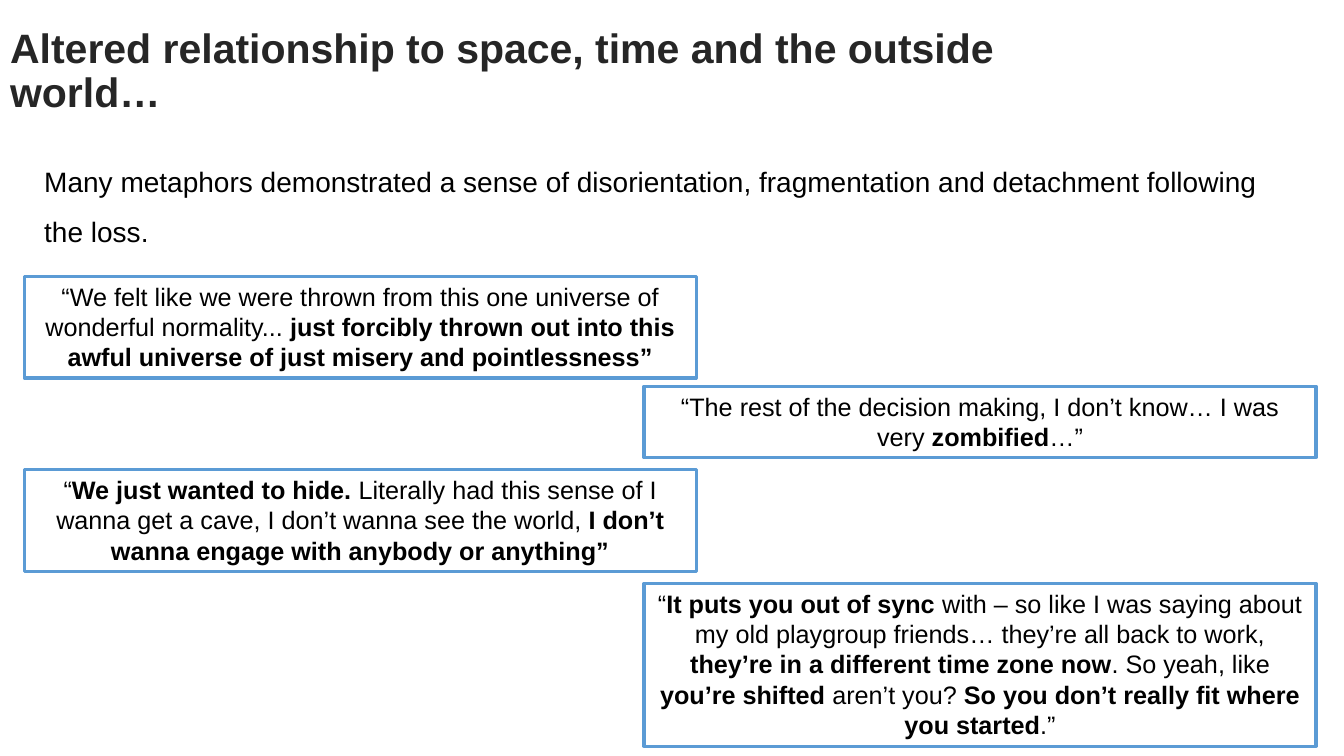
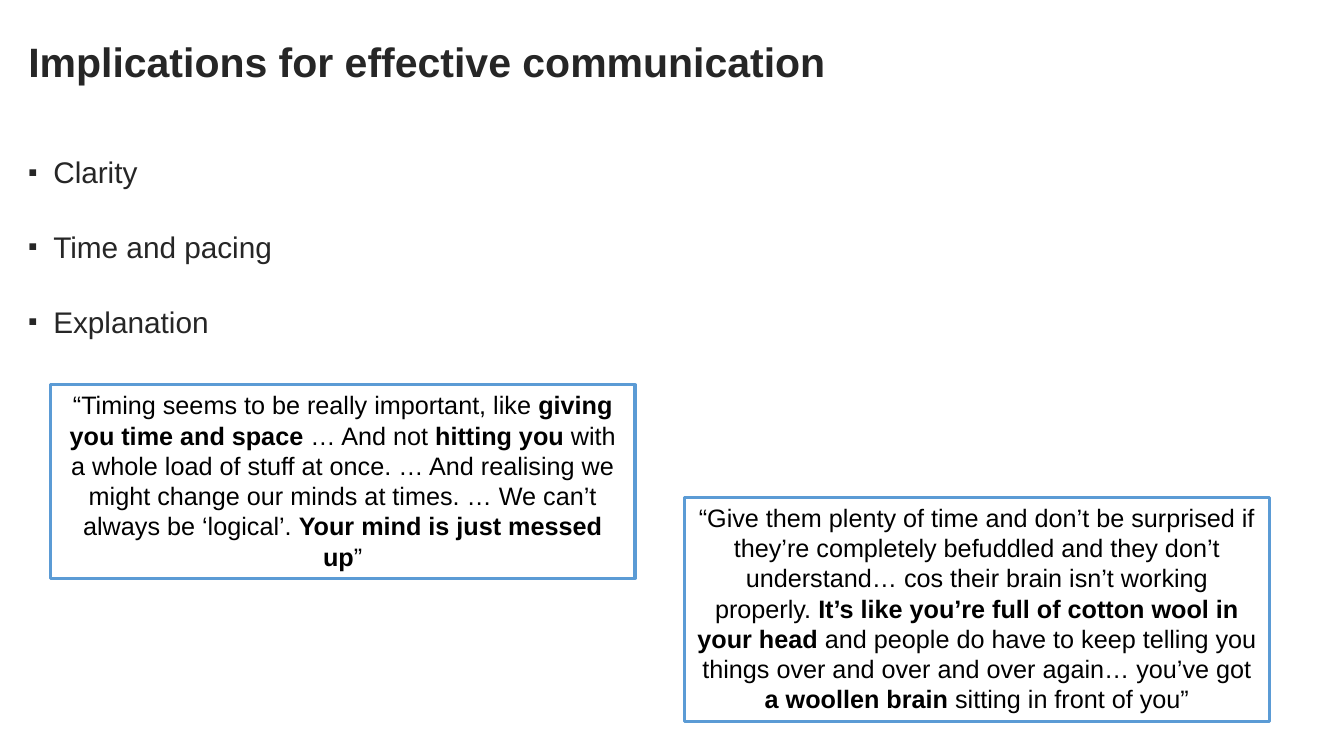
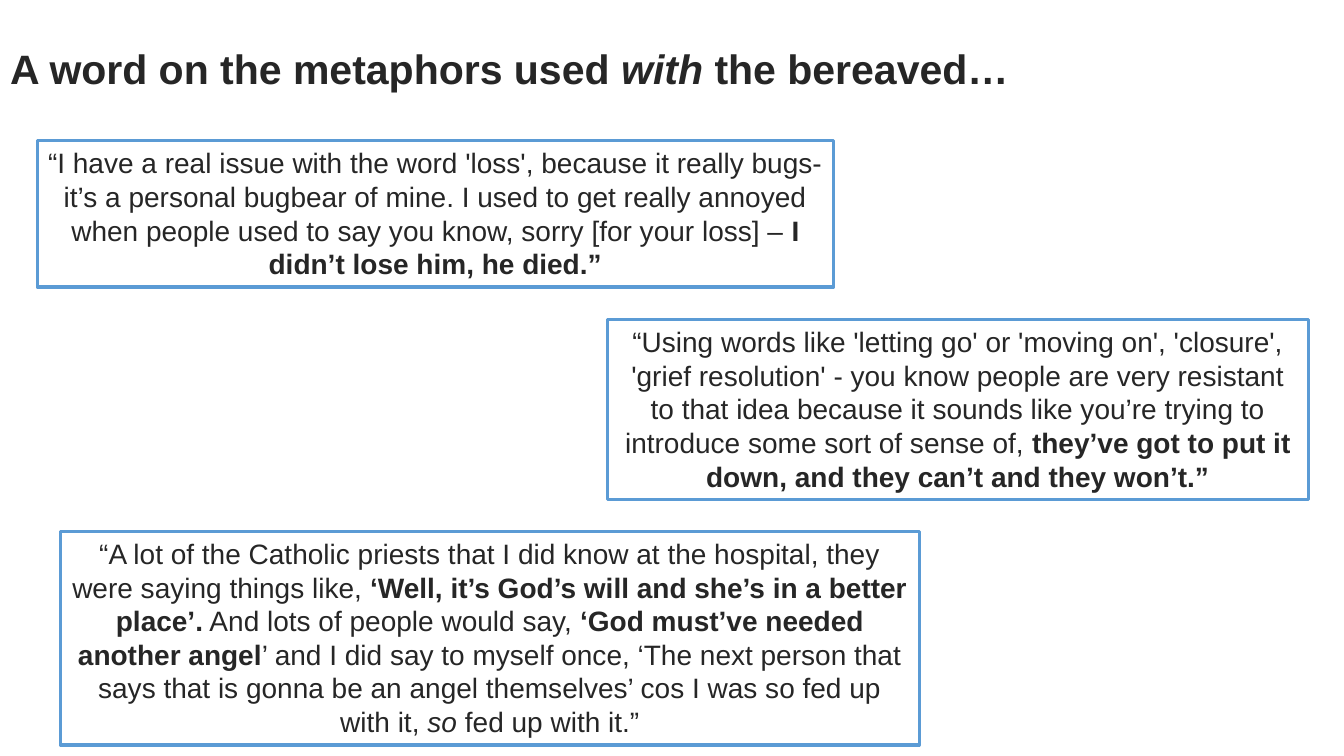
from dataclasses import dataclass

from lxml.etree import SubElement
from pptx import Presentation
from pptx.dml.color import RGBColor as RGB
from pptx.enum.shapes import MSO_SHAPE as SHAPE
from pptx.enum.text import MSO_ANCHOR as ANCHOR
from pptx.enum.text import MSO_AUTO_SIZE as FIT
from pptx.enum.text import PP_ALIGN as ALIGN
from pptx.oxml.ns import qn
from pptx.util import Pt


@dataclass(frozen=True)
class Theme:
    font: str = "Arial"
    heading: RGB = RGB(0x26, 0x26, 0x26)
    black: RGB = RGB(0, 0, 0)
    paper: RGB = RGB(0xFF, 0xFF, 0xFF)
    outline: RGB = RGB(0x5B, 0x9B, 0xD5)
    outline_width: float = 2.25
    title_size: float = 29.3
    bullet_size: float = 21.3
    large_size: float = 20
    quote_size: float = 18


THEME = Theme()


def write_marked(paragraph, text, size, color, bold=False, **layout):
    """Write text in which *stars* mark bold and _underscores_ mark italic."""
    for name, value in layout.items():
        setattr(paragraph, name, value)
    for i, part in enumerate(text.split("*")):
        for j, piece in enumerate(part.split("_")):
            if not piece:
                continue
            run = paragraph.add_run()
            run.text = piece
            style = {"name": THEME.font, "size": Pt(size),
                     "bold": bold or i % 2 == 1, "italic": j % 2 == 1}
            for name, value in style.items():
                setattr(run.font, name, value)
            run.font.color.rgb = color


def prepare_frame(frame, anchor=ANCHOR.TOP, fit=FIT.NONE):
    settings = {"word_wrap": True, "auto_size": fit, "vertical_anchor": anchor}
    for name, value in settings.items():
        setattr(frame, name, value)
    return frame


# Boxes are (left, top, width, height) in points.
SLIDES = [
    {
        "title": "Altered relationship to space, time and the outside world…",
        "title_box": (0, 16.5, 737, 104),
        "intro": "Many metaphors demonstrated a sense of disorientation, "
                 "fragmentation and detachment following the loss.",
        "intro_box": (24.5, 102, 910, 106.5),
        "quote_size": THEME.quote_size,
        "quote_color": THEME.black,
        "quotes": [
            ((17.3, 197.3, 480, 72.7),
             "“We felt like we were thrown from this one universe of wonderful "
             "normality... *just forcibly thrown out into this awful universe "
             "of just misery and pointlessness”*"),
            ((460, 275.8, 480, 51),
             "“The rest of the decision making, I don’t know… I was very "
             "*zombified*…”"),
            ((17.3, 335.3, 480, 72.7),
             "“*We just wanted to hide. *Literally had this sense of I wanna "
             "get a cave, I don’t wanna see the world, *I don’t wanna engage "
             "with anybody or anything”*"),
            ((460, 416.7, 480, 116.4),
             "“*It puts you out of sync *with – so like I was saying about my "
             "old playgroup friends… they’re all back to work, *they’re in a "
             "different time zone now*. So yeah, like *you’re shifted *aren’t "
             "you? *So you don’t really fit where you started*.”"),
        ],
    },
    {
        "title": "Implications for effective communication",
        "title_box": (13, 26.6, 815, 78),
        "bullets": ["Clarity", "Time and pacing", "Explanation"],
        "bullets_box": (13, 88.6, 911.5, 244),
        "quote_size": THEME.quote_size,
        "quote_color": THEME.black,
        "quotes": [
            ((36, 274.8, 417.6, 138.3),
             "“Timing seems to be really important, like *giving you time and "
             "space* … And not *hitting you *with a whole load of stuff at "
             "once. … And realising we might change our minds at times. … We "
             "can’t always be ‘logical’. *Your mind is just messed up*”"),
            ((489, 355.2, 417.6, 160),
             "“Give them plenty of time and don’t be surprised if they’re "
             "completely befuddled and they don’t understand… cos their brain "
             "isn’t working properly. *It’s like you’re full of cotton wool in "
             "your head* and people do have to keep telling you things over "
             "and over and over again… you’ve got *a woollen brain *sitting in "
             "front of you”"),
        ],
    },
    {
        "title": "A word on the metaphors used _with_ the bereaved…",
        "title_box": (0, 31.7, 828, 75.6),
        "quote_size": THEME.large_size,
        "quote_color": THEME.heading,
        "quotes": [
            ((26.5, 100.6, 569, 104.4),
             "“I have a real issue with the word 'loss', because it really "
             "bugs- it’s a personal bugbear of mine. I used to get really "
             "annoyed when people used to say you know, sorry [for your loss] "
             "– *I didn’t lose him, he died.”*"),
            ((434, 228.4, 500.4, 128.2),
             "“Using words like 'letting go' or 'moving on', 'closure', 'grief "
             "resolution' - you know people are very resistant to that idea "
             "because it sounds like you’re trying to introduce some sort of "
             "sense of, *they’ve got to put it down, and they can’t and they "
             "won’t.”*"),
            ((43.2, 379.6, 613.4, 152.6),
             "“A lot of the Catholic priests that I did know at the hospital, "
             "they were saying things like, *‘Well, it’s God’s will and she’s "
             "in a better place’.* And lots of people would say, *‘God must’ve "
             "needed another angel*’ and I did say to myself once, ‘The next "
             "person that says that is gonna be an angel themselves’ cos I was "
             "so fed up with it, _so_ fed up with it.”"),
        ],
    },
]

deck = Presentation()
deck.slide_width, deck.slide_height = Pt(960), Pt(540)
title_only = deck.slide_layouts[5]

for content in SLIDES:
    slide = deck.slides.add_slide(title_only)
    title = slide.shapes.title
    for side, length in zip(("left", "top", "width", "height"), content["title_box"]):
        setattr(title, side, Pt(length))
    write_marked(prepare_frame(title.text_frame).paragraphs[0], content["title"],
                 THEME.title_size, THEME.heading, bold=True,
                 alignment=ALIGN.LEFT, line_spacing=0.9)

    if "intro" in content:
        intro = slide.shapes.add_textbox(*map(Pt, content["intro_box"]))
        write_marked(prepare_frame(intro.text_frame).paragraphs[0], content["intro"],
                     THEME.large_size, THEME.black, line_spacing=1.5)

    if "bullets" in content:
        points = slide.shapes.add_textbox(*map(Pt, content["bullets_box"]))
        frame = prepare_frame(points.text_frame)
        for i, point in enumerate(content["bullets"]):
            paragraph = frame.add_paragraph() if i else frame.paragraphs[0]
            write_marked(paragraph, point, THEME.bullet_size, THEME.heading,
                         line_spacing=1.7, space_before=Pt(10 if i else 0))
            props = paragraph._p.get_or_add_pPr()
            props.set("marL", str(Pt(18)))
            props.set("indent", str(Pt(-18)))
            bullet_color = SubElement(props, qn("a:buClr"))
            SubElement(bullet_color, qn("a:srgbClr"), val=str(THEME.heading))
            SubElement(props, qn("a:buSzPct"), val="90000")
            SubElement(props, qn("a:buFont"), typeface=THEME.font)
            SubElement(props, qn("a:buChar"), char="▪")

    for box, words in content["quotes"]:
        quote = slide.shapes.add_shape(SHAPE.RECTANGLE, *map(Pt, box))
        quote.shadow.inherit = False
        quote.fill.solid()
        quote.fill.fore_color.rgb = THEME.paper
        quote.line.color.rgb = THEME.outline
        quote.line.width = Pt(THEME.outline_width)
        frame = prepare_frame(quote.text_frame, fit=FIT.SHAPE_TO_FIT_TEXT)
        write_marked(frame.paragraphs[0], words, content["quote_size"],
                     content["quote_color"], alignment=ALIGN.CENTER)

deck.save("out.pptx")
